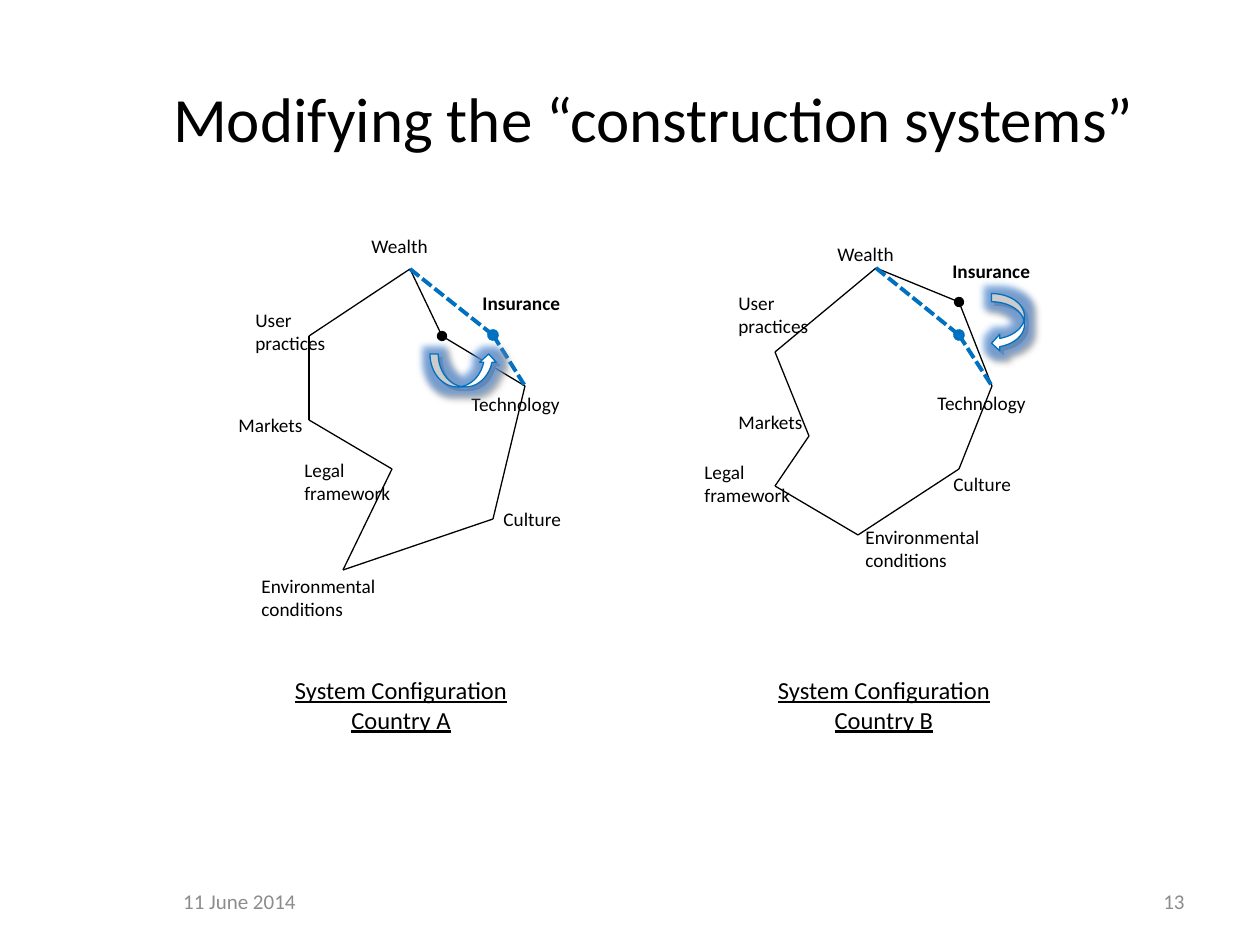
"""Build a slide on two countries' construction systems, each drawn as a ring."""
import itertools
import lxml.etree
import pptx
import pptx.util
import pptx.dml.color
import pptx.enum.dml
import pptx.enum.shapes
import pptx.enum.text
import pptx.oxml
import pptx.oxml.ns

RGB = pptx.dml.color.RGBColor
BLACK = RGB(0x00, 0x00, 0x00)
WHITE = RGB(0xFF, 0xFF, 0xFF)
GRAY = RGB(0x8C, 0x8C, 0x8C)
BLUE = RGB(0x00, 0x70, 0xC0)
ALIGN = pptx.enum.text.PP_ALIGN
MIDDLE = pptx.enum.text.MSO_ANCHOR.MIDDLE
KIND = pptx.enum.shapes.MSO_SHAPE
DASH = pptx.enum.dml.MSO_LINE.SQUARE_DOT
PX = 914400 / 126
FONT = "Calibri"

TITLE = ("Modifying the “construction systems”", (110, 38, 1087, 158))
FOOTER = [
    ("11 June 2014", (115, 876, 249, 50), ALIGN.CENTER),
    ("13", (903, 876, 294, 50), ALIGN.RIGHT),
]
LANDS = [
    {
        "ring": [(410, 269), (442, 336), (525, 386), (493, 519),
                 (343, 570), (392, 469), (309, 420), (309, 336)],
        "goal": (493, 335),
        "labels": [
            ("Insurance", (470, 285, 134, 50)),
            ("Technology", (459, 386, 150, 50)),
            ("Culture", (491, 501, 101, 50)),
            ("Wealth", (359, 228, 116, 78)),
            ("User\npractices", (243, 302, 166, 83)),
            ("Environmental conditions", (249, 568, 173, 83)),
            ("Legal framework", (292, 452, 134, 82)),
            ("Markets", (226, 407, 116, 62)),
        ],
        "arrow": (KIND.CURVED_UP_ARROW, (430, 354, 67, 33), 0),
        "name": ("System Configuration Country A", (243, 669, 316, 100)),
    },
    {
        "ring": [(876, 268), (959, 302), (992, 386), (959, 469),
                 (858, 535), (775, 486), (809, 436), (775, 352)],
        "goal": (959, 335),
        "labels": [
            ("Insurance", (940, 253, 134, 50)),
            ("Technology", (925, 385, 150, 50)),
            ("Culture", (941, 466, 134, 50)),
            ("Markets", (726, 404, 116, 50)),
            ("User\npractices", (726, 285, 166, 83)),
            ("Environmental conditions", (853, 519, 156, 83)),
            ("Wealth", (825, 236, 134, 50)),
            ("Legal framework", (692, 454, 134, 82)),
        ],
        "arrow": (KIND.CURVED_DOWN_ARROW, (979, 306, 58, 33), 90),
        "name": ("System Configuration Country B", (726, 669, 316, 100)),
    },
]
GLOW = (
    '<a:glow %s rad="101600"><a:srgbClr val="4F8FE0">'
    '<a:alpha val="60000"/></a:srgbClr></a:glow>'
    % pptx.oxml.ns.nsdecls("a")
)
SHADE = (
    '<a:outerShdw %s dist="35560" dir="2700000">'
    '<a:srgbClr val="808080"/></a:outerShdw>'
    % pptx.oxml.ns.nsdecls("a")
)


def scale(nums):
    return [round(num * PX) for num in nums]


def write(frame, text, size, color=BLACK, align=ALIGN.LEFT, bold=False, under=False):
    frame.word_wrap = True
    frame.text = text
    for par in frame.paragraphs:
        par.alignment = align
        font = par.font
        font.name, font.size = FONT, pptx.util.Pt(size)
        font.bold, font.underline = bold, under
        font.color.rgb = color


def add_text(slide, text, place, size, **style):
    frame = slide.shapes.add_textbox(*scale(place)).text_frame
    write(frame, text, size, **style)
    return frame


def add_line(slide, start, end, color=BLACK, width=0.75, dash=None, dot=False):
    line = slide.shapes.add_connector(
        pptx.enum.shapes.MSO_CONNECTOR.STRAIGHT, *scale(start + end))
    line.line.color.rgb = color
    line.line.width = pptx.util.Pt(width)
    if dash:
        line.line.dash_style = dash
    props = line._element.spPr
    if dot:
        stroke = props.find(pptx.oxml.ns.qn("a:ln"))
        lxml.etree.SubElement(stroke, pptx.oxml.ns.qn("a:tailEnd"), type="oval")
    lxml.etree.SubElement(props, pptx.oxml.ns.qn("a:effectLst"))


def add_arrow(slide, kind, place, turn):
    arrow = slide.shapes.add_shape(kind, *scale(place))
    arrow.rotation = turn
    arrow.fill.solid()
    arrow.fill.fore_color.rgb = WHITE
    arrow.line.color.rgb = BLUE
    arrow.line.width = pptx.util.Pt(0.75)
    arrow.shadow.inherit = False
    effects = arrow._element.spPr.find(pptx.oxml.ns.qn("a:effectLst"))
    for xml in (GLOW, SHADE):
        effects.append(pptx.oxml.parse_xml(xml))


def add_land(slide, land):
    ring, goal = land["ring"], land["goal"]
    for step, (start, end) in enumerate(itertools.pairwise(ring + ring[:1])):
        add_line(slide, start, end, dot=step == 0)
    for text, place in land["labels"]:
        add_text(slide, text, place, 11, bold=text == "Insurance")
    add_line(slide, ring[0], goal, BLUE, 2.25, DASH, dot=True)
    add_line(slide, goal, ring[2], BLUE, 2.25, DASH)
    add_arrow(slide, *land["arrow"])
    add_text(slide, *land["name"], 14, align=ALIGN.CENTER, under=True)


def main():
    deck = pptx.Presentation()
    deck.slide_width, deck.slide_height = scale((1260, 945))
    slide = deck.slides.add_slide(deck.slide_layouts[5])
    title = slide.shapes.title
    text, place = TITLE
    title.left, title.top, title.width, title.height = scale(place)
    write(title.text_frame, text, 36, align=ALIGN.CENTER)
    title.text_frame.vertical_anchor = MIDDLE
    for text, place, align in FOOTER:
        frame = add_text(slide, text, place, 12, color=GRAY, align=align)
        frame.vertical_anchor = MIDDLE
    for land in LANDS:
        add_land(slide, land)
    deck.save("out.pptx")


if __name__ == "__main__":
    main()
